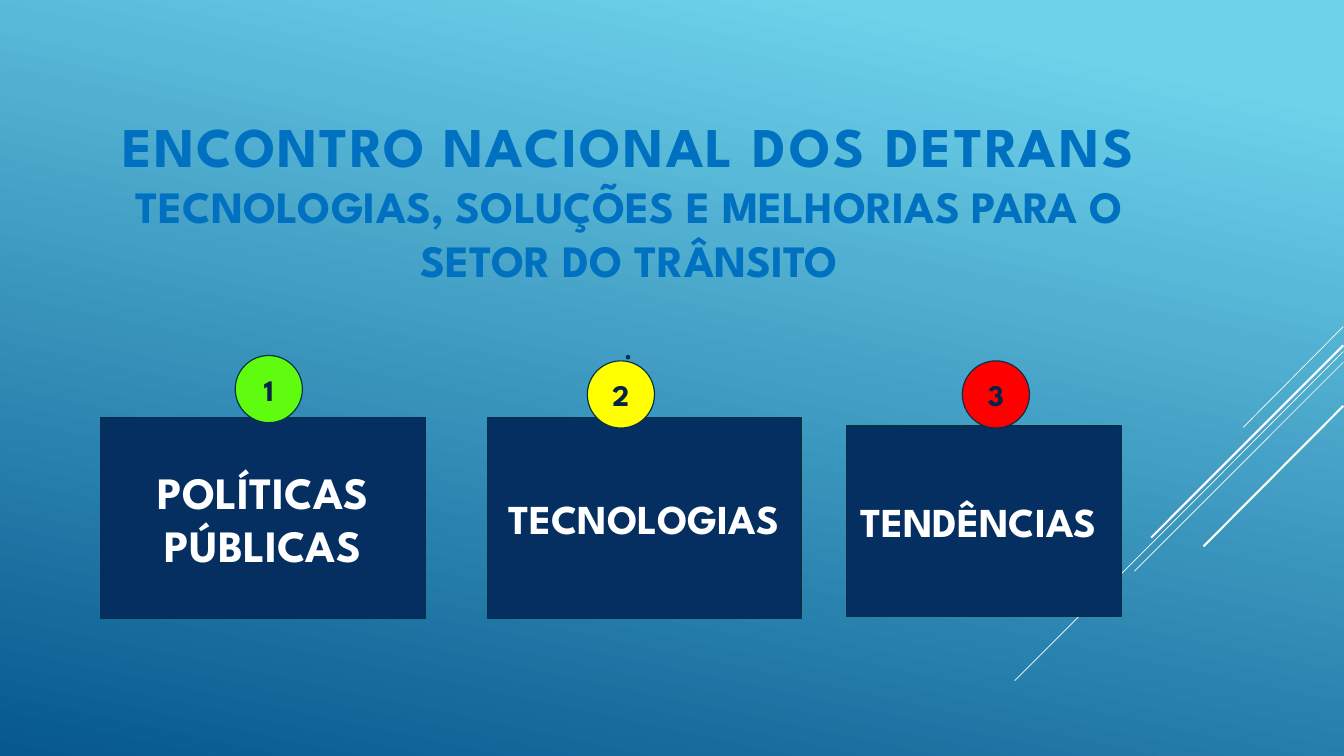
from pptx import Presentation
from pptx.dml.color import RGBColor
from pptx.enum.shapes import MSO_CONNECTOR, MSO_SHAPE
from pptx.enum.text import MSO_ANCHOR, MSO_AUTO_SIZE, PP_ALIGN
from pptx.oxml.ns import qn
from pptx.util import Inches, Pt
from lxml import etree

RECTANGLE, OVAL = MSO_SHAPE.RECTANGLE, MSO_SHAPE.OVAL
STRAIGHT = MSO_CONNECTOR.STRAIGHT
MIDDLE, CENTER = MSO_ANCHOR.MIDDLE, PP_ALIGN.CENTER
NO_AUTOFIT = MSO_AUTO_SIZE.NONE
FONT = "League Spartan"
COLORS = {
    "sky": "6ED2EB", "deep": "06588E", "title": "0070C0", "navy": "052F61",
    "outline": "043148", "number": "042349", "white": "FFFFFF",
    "green": "5FFC10", "yellow": "FFFF00", "red": "FF0000",
}


def add_span(para, text, size, color, spacing=0):
    span = para.add_run()
    span.text = text
    for name, value in {"name": FONT, "size": Pt(size), "bold": True}.items():
        setattr(span.font, name, value)
    span.font.color.rgb = RGBColor.from_string(COLORS[color])
    if spacing:
        span._r.get_or_add_rPr().set("spc", str(round(spacing * 100)))


def add_block(kind, left, top, width, height, fill):
    block = page.shapes.add_shape(
        kind, Inches(left), Inches(top), Inches(width), Inches(height))
    block.shadow.inherit = False
    block.fill.solid()
    block.fill.fore_color.rgb = RGBColor.from_string(COLORS[fill])
    block.line.color.rgb = RGBColor.from_string(COLORS["outline"])
    block.line.width = Pt(1.25)
    block.text_frame.word_wrap = True
    block.text_frame.vertical_anchor = MIDDLE
    para = block.text_frame.paragraphs[0]
    para.alignment = CENTER
    return para


deck = Presentation()
deck.slide_width, deck.slide_height = Inches(20), Inches(11.25)
page = deck.slides.add_slide(deck.slide_layouts[5])

# Background gradient, light at the top right
background = page.background.fill
background.gradient()
background.gradient_angle = 258
for stop, (position, color) in zip(background.gradient_stops, [(0.1, "sky"), (1, "deep")]):
    stop.position = position
    stop.color.rgb = RGBColor.from_string(COLORS[color])

# Diagonal lines running off the right edge
RIGHT_EDGE = 19.99
for start_y, end_x, end_y, weight in [
    (4.86, 18.5, 6.36, 0.75),
    (5.23, 15.1, 10.13, 0.75),
    (5.39, 16.88, 8.5, 0.75),
    (5.14, 17.13, 8, 2.25),
    (6.04, 17.91, 8.13, 2.25),
]:
    line = page.shapes.add_connector(
        STRAIGHT, Inches(RIGHT_EDGE), Inches(start_y), Inches(end_x), Inches(end_y))
    line.line.color.rgb = RGBColor.from_string(COLORS["white"])
    line.line.width = Pt(weight)
    etree.SubElement(line._element.spPr, qn("a:effectLst"))

# Title and subtitle
title = page.shapes.title
title.left, title.top, title.width, title.height = (
    Inches(1.12), Inches(0.71), Inches(16.5), Inches(4.5))
frame = title.text_frame
for name, value in {"word_wrap": True, "auto_size": NO_AUTOFIT,
                    "vertical_anchor": MIDDLE}.items():
    setattr(frame, name, value)
heading = frame.paragraphs[0]
heading.alignment = CENTER
heading.space_before = Pt(1)
for text, spacing in [("ENCONTRO ", 1.9), ("NACIONAL ", 2.4), ("DOS ", 3.1), ("DETRANS", 2.9)]:
    add_span(heading, text, 60, "title", spacing)
heading.add_line_break()
add_span(heading, "TECNOLOGIAS, SOLUÇÕES E MELHORIAS PARA O SETOR DO TRÂNSITO", 48, "title")

# Topic boxes
for text, size, left, top, width, height in [
    ("POLÍTICAS PÚBLICAS", 48, 1.5, 6.21, 4.83, 3),
    ("TECNOLOGIAS", 44, 7.25, 6.21, 4.67, 3),
    ("TENDÊNCIAS ", 44, 12.6, 6.34, 4.09, 2.83),
]:
    add_span(add_block(RECTANGLE, left, top, width, height, "navy"), text, size, "white")

# Small dot behind the second badge
add_block(OVAL, 9.32, 5.29, 0.05, 0.05, "navy")

# Numbered badges
for number, (left, top, fill) in enumerate(
        [(3.5, 5.29, "green"), (8.74, 5.37, "yellow"), (14.32, 5.37, "red")], start=1):
    add_span(add_block(OVAL, left, top, 1, 1, fill), str(number), 32, "number")

deck.save("out.pptx")
